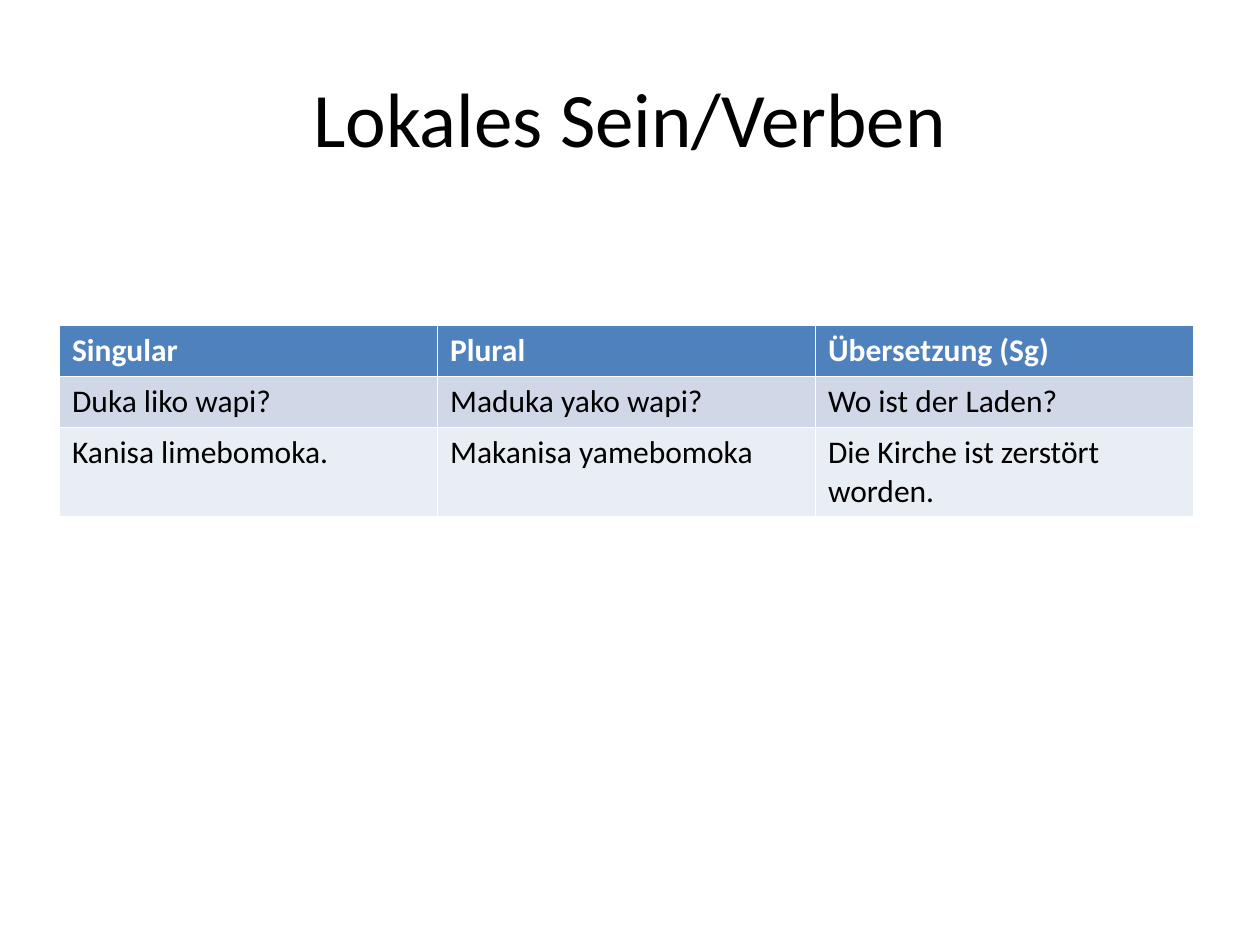
from pptx import Presentation
from pptx.dml.color import RGBColor
from pptx.enum.text import MSO_ANCHOR, PP_ALIGN
from pptx.util import Cm, Pt


def color(value):
    return RGBColor.from_string(value)


class SlideBuilder:
    """Holds the style and the current slide, and adds its elements."""

    font = "Calibri"
    dark, light = "000000", "FFFFFF"
    header_fill = "4F81BD"
    band_fills = ("D0D8E8", "E9EDF4")

    def __init__(self, deck):
        self.page = deck.slides.add_slide(deck.slide_layouts[5])

    def format_text(self, frame, size, text_color, bold=False):
        for para in frame.paragraphs:
            for span in para.runs:
                span.font.name = self.font
                span.font.size = Pt(size)
                span.font.bold = bold
                span.font.color.rgb = color(text_color)

    def title(self, text, left, top, width, height):
        box = self.page.shapes.title
        box.left, box.top, box.width, box.height = Cm(left), Cm(top), Cm(width), Cm(height)
        frame = box.text_frame
        frame.text = text
        frame.vertical_anchor = MSO_ANCHOR.MIDDLE
        frame.paragraphs[0].alignment = PP_ALIGN.CENTER
        self.format_text(frame, 44, self.dark)

    def table(self, rows, left, top, width, row_height):
        table = self.page.shapes.add_table(
            len(rows), len(rows[0]), Cm(left), Cm(top), Cm(width), Cm(row_height * len(rows))
        ).table
        for row_index, texts in enumerate(rows):
            header = row_index == 0
            fill = self.header_fill if header else self.band_fills[(row_index - 1) % 2]
            for column_index, text in enumerate(texts):
                cell = table.cell(row_index, column_index)
                cell.text_frame.text = text
                cell.fill.solid()
                cell.fill.fore_color.rgb = color(fill)
                self.format_text(cell.text_frame, 18, self.light if header else self.dark, header)


def main():
    deck = Presentation()
    deck.slide_width, deck.slide_height = Cm(25.4), Cm(19.05)
    builder = SlideBuilder(deck)
    builder.title("Lokales Sein/Verben", 1.27, 0.76, 22.86, 3.18)
    rows = [
        ("Singular", "Plural", "Übersetzung (Sg)"),
        ("Duka liko wapi?", "Maduka yako wapi?", "Wo ist der Laden?"),
        ("Kanisa limebomoka.", "Makanisa yamebomoka", "Die Kirche ist zerstört worden."),
    ]
    builder.table(rows, 1.2, 6.56, 22.86, 1.03)
    deck.save("out.pptx")


if __name__ == "__main__":
    main()
